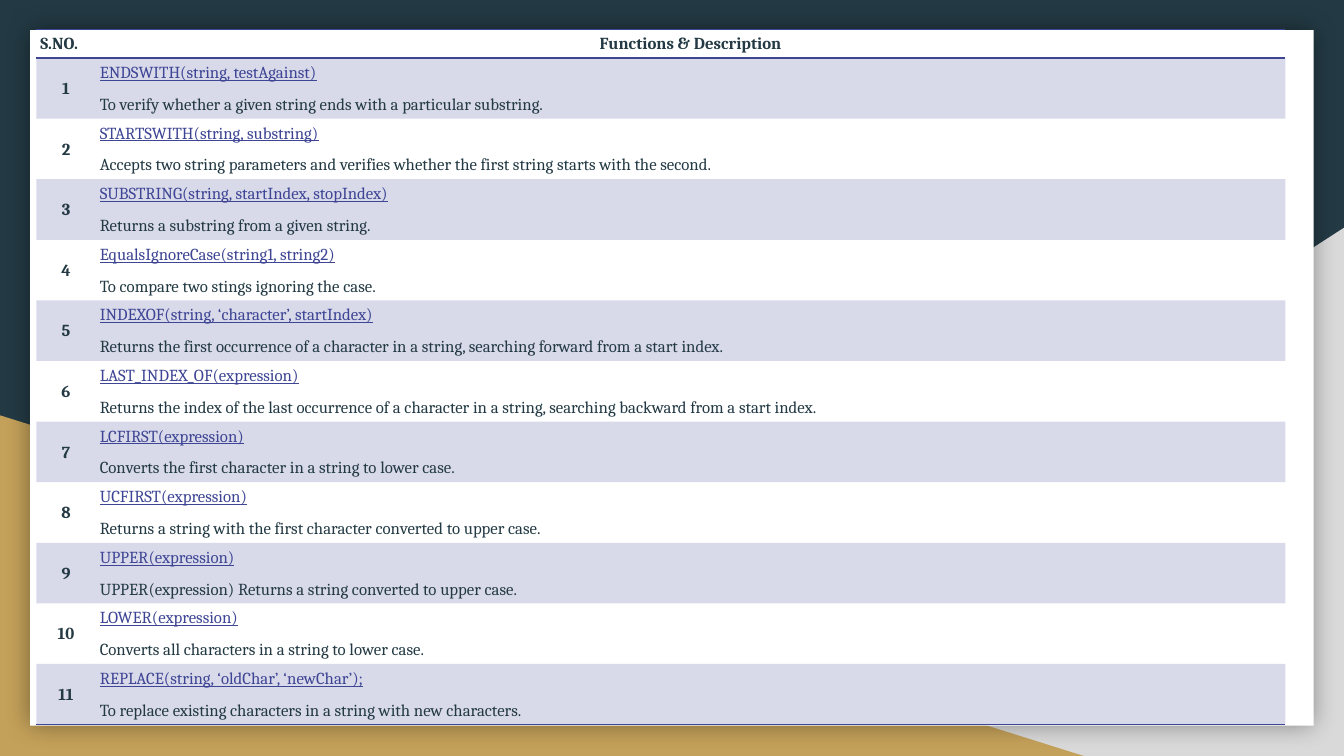
import pptx
import pptx.util
import pptx.dml.color
import pptx.enum.shapes
import pptx.enum.text
import pptx.oxml
import pptx.oxml.ns

Inches, Pt = pptx.util.Inches, pptx.util.Pt
RGB = pptx.dml.color.RGBColor
KIND = pptx.enum.shapes.MSO_SHAPE
ALIGN = pptx.enum.text.PP_ALIGN
NS = pptx.oxml.ns.nsdecls("a")

NAVY = RGB(0x23, 0x3A, 0x44)
GREY = RGB(0xD9, 0xD9, 0xD9)
GOLD = RGB(0xC4, 0xA1, 0x5A)
WHITE = RGB(0xFF, 0xFF, 0xFF)
INDIGO = RGB(0x3D, 0x45, 0x94)

WIDE, HIGH = 13.33, 7.5
EDGE = 0.3
COLS = (0.59, 11.8)
HEAD, ROW = 0.28, 0.6

FUNCS = [
    ("ENDSWITH(string, testAgainst)",
     "To verify whether a given string ends with a particular substring."),
    ("STARTSWITH(string, substring)",
     "Accepts two string parameters and verifies whether the first string starts with the second."),
    ("SUBSTRING(string, startIndex, stopIndex)",
     "Returns a substring from a given string."),
    ("EqualsIgnoreCase(string1, string2)",
     "To compare two stings ignoring the case."),
    ("INDEXOF(string, ‘character’, startIndex)",
     "Returns the first occurrence of a character in a string, searching forward from a start index."),
    ("LAST_INDEX_OF(expression)",
     "Returns the index of the last occurrence of a character in a string, searching backward from a start index."),
    ("LCFIRST(expression)",
     "Converts the first character in a string to lower case."),
    ("UCFIRST(expression)",
     "Returns a string with the first character converted to upper case."),
    ("UPPER(expression)",
     "UPPER(expression) Returns a string converted to upper case."),
    ("LOWER(expression)",
     "Converts all characters in a string to lower case."),
    ("REPLACE(string, ‘oldChar’, ‘newChar’);",
     "To replace existing characters in a string with new characters."),
]

deck = pptx.Presentation()
deck.slide_width, deck.slide_height = Inches(WIDE), Inches(HIGH)
slide = deck.slides.add_slide(deck.slide_layouts[6])
slide.background.fill.solid()
slide.background.fill.fore_color.rgb = NAVY


def panel(kind, left, top, width, height, color):
    """Add a plain filled shape without line or shadow."""
    shape = slide.shapes.add_shape(
        kind, Inches(left), Inches(top), Inches(width), Inches(height))
    shape.shadow.inherit = False
    shape.fill.solid()
    shape.fill.fore_color.rgb = color
    shape.line.fill.background()
    return shape


def rule(cell, side):
    """Draw a border on the top (T) or bottom (B) of a cell."""
    cell._tc.get_or_add_tcPr().insert(0, pptx.oxml.parse_xml(
        f'<a:ln{side} {NS} w="12700"><a:solidFill><a:srgbClr val="{INDIGO}"/>'
        f'</a:solidFill></a:ln{side}>'))


# Backdrop: two corner triangles behind a white card
right = panel(KIND.RIGHT_TRIANGLE, WIDE - 8.11, HIGH - 5.24, 8.11, 5.24, GREY)
right._element.spPr.xfrm.set("flipH", "1")
panel(KIND.RIGHT_TRIANGLE, 0, HIGH - 3.38, 10.75, 3.38, GOLD)
card = panel(KIND.RECTANGLE, EDGE, EDGE, WIDE - 2 * EDGE, HIGH - 2 * EDGE, WHITE)
glow = card._element.spPr.find(pptx.oxml.ns.qn("a:effectLst"))
glow.append(pptx.oxml.parse_xml(
    f'<a:outerShdw {NS} blurRad="{Pt(18)}" dist="0" dir="0" algn="ctr" rotWithShape="0">'
    '<a:srgbClr val="000000"><a:alpha val="40000"/></a:srgbClr></a:outerShdw>'))

# Table of functions
count = len(FUNCS)
table = slide.shapes.add_table(
    count + 1, 2, Inches(0.36), Inches(0.29),
    Inches(sum(COLS)), Inches(HEAD + count * ROW)).table
table.first_row = table.horz_banding = False
style = table._tbl.tblPr.find(pptx.oxml.ns.qn("a:tableStyleId"))
style.text = "{2D5ABB26-0587-4C30-8999-92F81FD0307C}"
for col, width in zip(table.columns, COLS):
    col.width = Inches(width)

rows = [("S.NO.", "Functions & Description")]
rows += [(str(n), "\n".join(func)) for n, func in enumerate(FUNCS, 1)]

for r, texts in enumerate(rows):
    table.rows[r].height = Inches(ROW if r else HEAD)
    for c, text in enumerate(texts):
        cell = table.cell(r, c)
        cell.margin_left = cell.margin_right = Inches(0.04)
        cell.margin_top = cell.margin_bottom = Inches(0.04)
        cell.vertical_anchor = pptx.enum.text.MSO_ANCHOR.MIDDLE
        if r % 2:
            cell.fill.solid()
            cell.fill.fore_color.rgb = INDIGO
            tint = cell._tc.tcPr.find(".//" + pptx.oxml.ns.qn("a:srgbClr"))
            tint.append(pptx.oxml.parse_xml(f'<a:alpha {NS} val="20000"/>'))
        else:
            cell.fill.background()
        if r in (0, count):
            rule(cell, "B")
        if r == 0:
            rule(cell, "T")

        cell.text_frame.text = text
        for i, para in enumerate(cell.text_frame.paragraphs):
            link = r > 0 and c == 1 and i == 0
            para.alignment = ALIGN.CENTER if (r == 0) == (c == 1) else ALIGN.LEFT
            para.line_spacing = 1.07
            para.space_after = Pt(8)
            font = para.runs[0].font
            font.name, font.size = "Cambria", Pt(12)
            font.bold = r == 0 or c == 0
            font.underline = link
            font.color.rgb = INDIGO if link else NAVY

deck.save("out.pptx")
